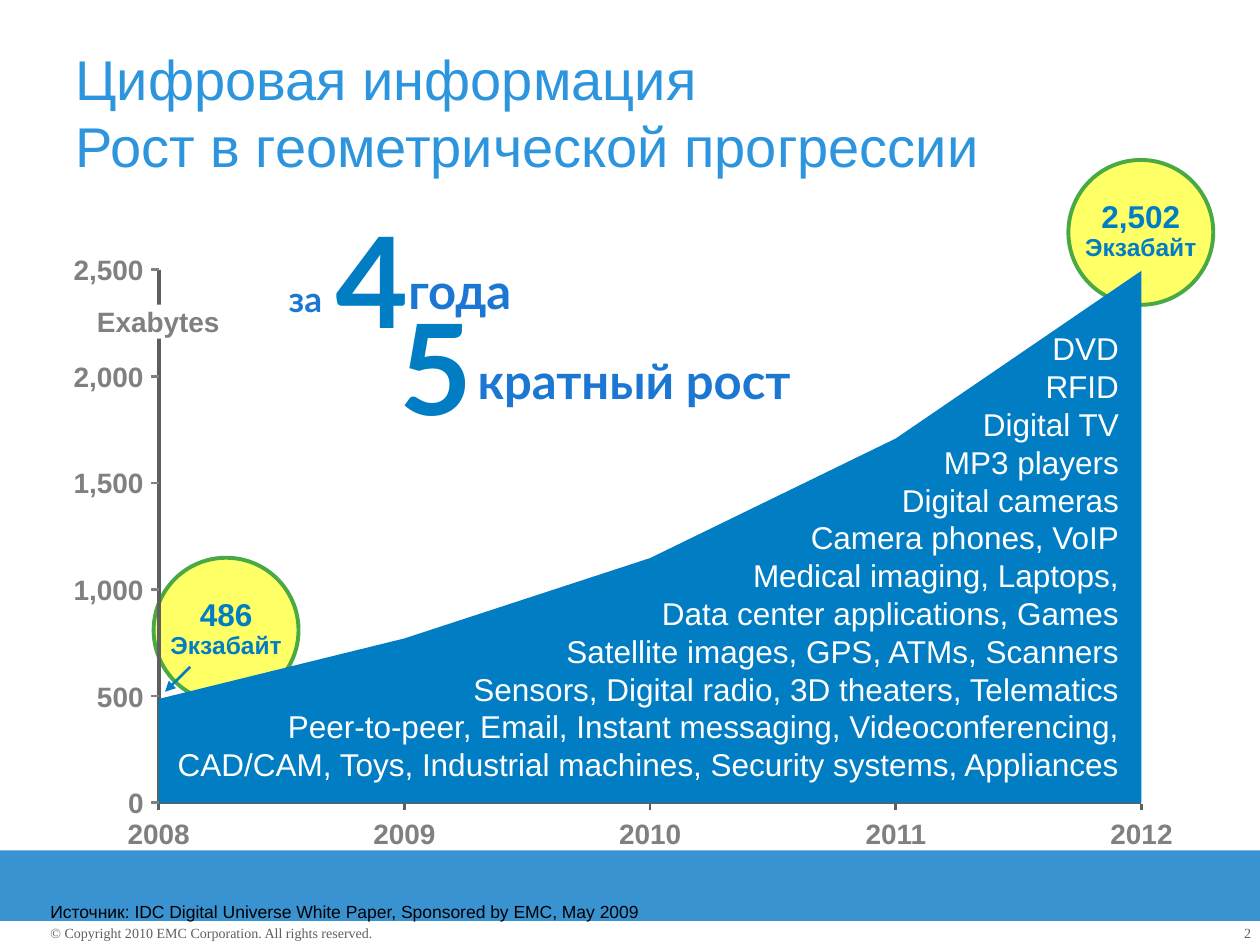
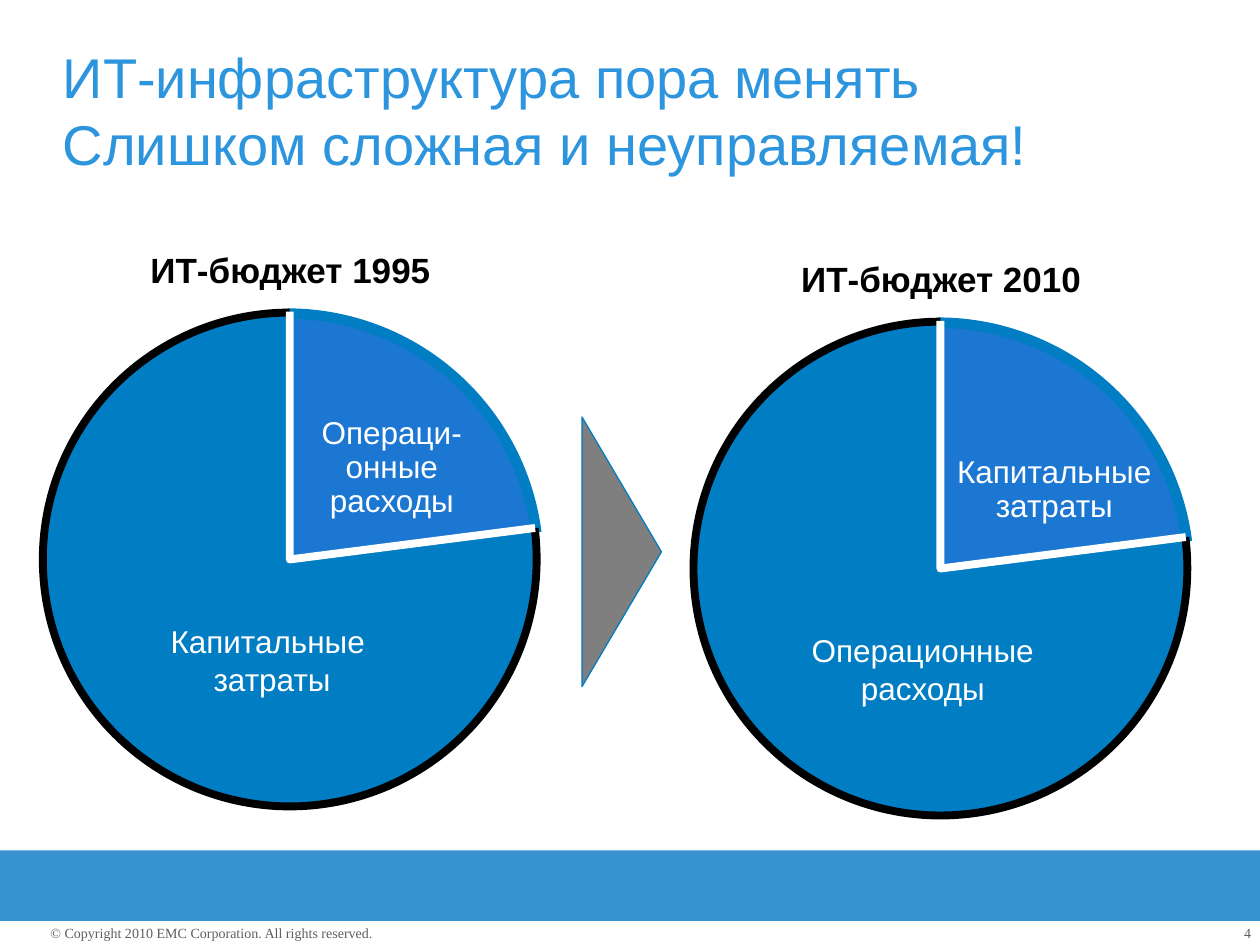
import itertools
import pptx
import pptx.dml.color
import pptx.enum.shapes
import pptx.enum.text
import pptx.oxml
import pptx.oxml.ns
import pptx.util

Pt = pptx.util.Pt
KIND = pptx.enum.shapes.MSO_SHAPE
ALIGN = pptx.enum.text.PP_ALIGN
ANCHOR = pptx.enum.text.MSO_ANCHOR
LEFT, MID, RIGHT = ALIGN.LEFT, ALIGN.CENTER, ALIGN.RIGHT

BLUE, ROYAL, SKY, BAND = "007DC3", "1C77D2", "2C95DD", "3993D0"
WHITE, BLACK, GREY, DARK = "FFFFFF", "000000", "808080", "5F5F5F"
YELLOW, GREEN, STEEL = "FFFF66", "49A942", "7F7F7F"

LABEL = dict(size=16, hue=GREY, bold=True, anchor=ANCHOR.MIDDLE)
NOTE = dict(size=8, hue=DARK, font="Times New Roman")
YEARS = ["2008", "2009", "2010", "2011", "2012"]
SIZES = [486, 770, 1147, 1708, 2495]
PEAK = 2500
USES = """DVD
RFID
Digital TV
MP3 players
Digital cameras
Camera phones, VoIP
Medical imaging, Laptops,
Data center applications, Games
Satellite images, GPS, ATMs, Scanners
Sensors, Digital radio, 3D theaters, Telematics
Peer-to-peer, Email, Instant messaging, Videoconferencing,
CAD/CAM, Toys, Industrial machines, Security systems, Appliances"""


def color(code):
    return pptx.dml.color.RGBColor.from_string(code)


def paint(shape, fill=None, line=None, width=1):
    shape.shadow.inherit = False
    if fill:
        shape.fill.solid()
        shape.fill.fore_color.rgb = color(fill)
    else:
        shape.fill.background()
    if line:
        shape.line.color.rgb = color(line)
        shape.line.width = Pt(width)
    else:
        shape.line.fill.background()


def form(slide, kind, box, adjust=(), **look):
    shape = slide.shapes.add_shape(kind, *map(Pt, box))
    for i, value in enumerate(adjust):
        shape.adjustments[i] = value
    paint(shape, **look)


def path(slide, dots, close=False, **look):
    first, *rest = [(Pt(x), Pt(y)) for x, y in dots]
    pen = slide.shapes.build_freeform(*first, scale=1.0)
    pen.add_line_segments(rest, close=close)
    paint(pen.convert_to_shape(), **look)


def rule(slide, start, end, hue, arrow=False):
    line = slide.shapes.add_connector(
        pptx.enum.shapes.MSO_CONNECTOR.STRAIGHT, *map(Pt, start + end))
    line.line.color.rgb = color(hue)
    line.line.width = Pt(1.5)
    make, name = pptx.oxml.parse_xml, pptx.oxml.ns.nsdecls("a")
    if arrow:
        line.line._get_or_add_ln().append(
            make(f'<a:tailEnd {name} type="triangle"/>'))
    line._element.spPr.append(make(f"<a:effectLst {name}/>"))


def text(slide, box, words, size, hue, font="Arial", bold=False, align=LEFT,
         anchor=ANCHOR.TOP, wrap=False, inset=(0, 0), space=None, fill=None):
    """Write one paragraph a line; size may be a list, one size a line."""
    item = slide.shapes.add_textbox(*map(Pt, box))
    if fill:
        paint(item, fill)
    frame = item.text_frame
    side, edge = map(Pt, inset)
    look = dict(word_wrap=wrap, vertical_anchor=anchor, margin_left=side,
                margin_right=side, margin_top=edge, margin_bottom=edge)
    for key, value in look.items():
        setattr(frame, key, value)
    frame.text = words
    sizes = itertools.cycle(size if isinstance(size, list) else [size])
    for para, points in zip(frame.paragraphs, sizes):
        para.alignment = align
        if space:
            para.line_spacing = space
        for run in para.runs:
            for key, value in dict(name=font, size=Pt(points), bold=bold).items():
                setattr(run.font, key, value)
            run.font.color.rgb = color(hue)


def base(deck, number):
    slide = deck.slides.add_slide(deck.slide_layouts[6])
    form(slide, KIND.RECTANGLE, (0, 486, 720, 40.3), fill=BAND)
    text(slide, (673, 528.5, 42, 10), number, align=RIGHT, wrap=True, **NOTE)
    text(slide, (28.8, 528.5, 190, 10),
         "© Copyright 2010 EMC Corporation. All rights reserved.", **NOTE)
    return slide


def title(slide, box, words):
    text(slide, box, words, 32, SKY, wrap=True, inset=(7.2, 3.6))


def badge(slide, left, top, value):
    form(slide, KIND.OVAL, (left, top, 82.8, 82.8),
         fill=YELLOW, line=GREEN, width=2.25)
    text(slide, (left + 4.4, top + 23.6, 74, 34.5), value + "\nЭкзабайт",
         [18, 14], BLUE, bold=True, align=MID, space=0.9)


def graph(slide, box):
    left, top, wide, high = box
    base_y = top + high
    step = wide / (len(YEARS) - 1)

    def rise(value):
        return base_y - high * value / PEAK

    cols = [left + i * step for i in range(len(YEARS))]
    badge(slide, left - 2.9, top + 164.6, "486")
    badge(slide, left + 519.8, top - 62.7, "2,502")
    path(slide, [(left, top), (left, base_y), (left + wide, base_y)],
         line=DARK, width=2.25)
    curve = [(x, rise(size)) for x, size in zip(cols, SIZES)]
    path(slide, [(left, base_y), *curve, (cols[-1], base_y)],
         close=True, fill=BLUE)
    for mark in range(0, PEAK + 1, 500):
        y = rise(mark)
        rule(slide, (left - 4.3, y), (left, y), GREY)
        text(slide, (left - 53, y - 9.7, 44.3, 19.4), f"{mark:,}",
             align=RIGHT, wrap=True, **LABEL)
    for x, year in zip(cols, YEARS):
        rule(slide, (x, base_y + 4.4), (x, base_y + 0.8), DARK)
        text(slide, (x - 22, base_y + 8, 44, 19.4), year,
             align=MID, **LABEL)
    text(slide, (left, top + 30.6, wide - 5.8, 266.4), USES, 18, WHITE,
         align=RIGHT, inset=(7.2, 3.6))
    text(slide, (left - 41.2, top + 20, 76, 19.4), "Exabytes",
         align=RIGHT, fill=WHITE, **LABEL)
    rule(slide, (left + 18, top + 227), (left + 3.6, top + 241.2), BLUE, True)


def claim(slide, left, top):
    """Set the two lines of large and small words."""
    parts = [
        ("5", 63.4, 49.7, 42.5, 86.4, 72, BLUE, LEFT),
        ("кратный рост", 108, 84.2, 183.6, 33.8, 28, ROYAL, LEFT),
        ("4", 26, 0, 42.5, 86.4, 72, BLUE, RIGHT),
        ("года", 68.4, 33.1, 61.2, 33.8, 28, ROYAL, LEFT),
        ("за", 0, 42.5, 27.4, 23.8, 20, ROYAL, LEFT),
    ]
    for words, x, y, wide, high, size, hue, align in parts:
        text(slide, (left + x, top + y, wide, high), words, size, hue, "Lato",
             True, align, ANCHOR.MIDDLE, fill=WHITE)


def wedge(slide, box, start, end, fill, line, width):
    """Fill a sector and line only its arc; angles in degrees."""
    turn = (start * 0.6, end * 0.6)
    form(slide, KIND.PIE, box, turn, fill=fill)
    form(slide, KIND.ARC, box, turn, line=line, width=width)


def budget(slide, left, top, year, minor, wide, drop, major):
    side, cut = 282.2, 352.7
    mid = side / 2
    wedge(slide, (left - 3.5, top + 0.6, 286.6, 286.6), 270, cut, ROYAL, BLUE, 6)
    wedge(slide, (left, top, side, side), cut, 270, BLUE, BLACK, 4.5)
    x, y = left + mid, top + mid
    path(slide, [(x, top - 0.5), (x, y), (x + 140.2, y - 18)],
         line=WHITE, width=4.5)
    text(slide, (left + 145, top + drop, wide, 118 - drop), minor, 18, WHITE,
         align=MID, wrap=True, space=0.9)
    text(slide, (left + 61, top + 177, 140, 43.2), major, 18, WHITE, align=MID)
    text(slide, (left + 54.4, top - 40.3, 175, 31), "ИТ-бюджет " + year,
         20, BLACK, bold=True, inset=(7.2, 3.6))


def growth(deck):
    slide = base(deck, "2")
    graph(slide, (90.7, 154.1, 561.6, 304.5))
    text(slide, (28.8, 514.8, 337, 12.2),
         "Источник: IDC Digital Universe White Paper, Sponsored by EMC, May 2009",
         10, BLACK)
    claim(slide, 164.9, 115.9)
    title(slide, (36, 21.6, 648, 90),
          "Цифровая информация\nРост в геометрической прогрессии")


def costs(deck):
    slide = base(deck, "4")
    title(slide, (28.8, 20.5, 658, 84.2),
          "ИТ-инфраструктура пора менять\nСлишком сложная и неуправляемая!")
    budget(slide, 24.5, 178.6, "1995", "Операци-онные расходы", 108.7, 59.7,
           "Капитальные \nзатраты")
    form(slide, KIND.RIGHT_ARROW, (332.6, 238.3, 45.4, 154.1), (1, 1),
         fill=STEEL, line=BLUE, width=0.75)
    budget(slide, 396.3, 183.8, "2010", "Капитальные затраты", 122.4, 76.8,
           "Операционные\nрасходы")


def main():
    deck = pptx.Presentation()
    deck.slide_width, deck.slide_height = Pt(720), Pt(540)
    growth(deck)
    costs(deck)
    deck.save("out.pptx")


if __name__ == "__main__":
    main()
